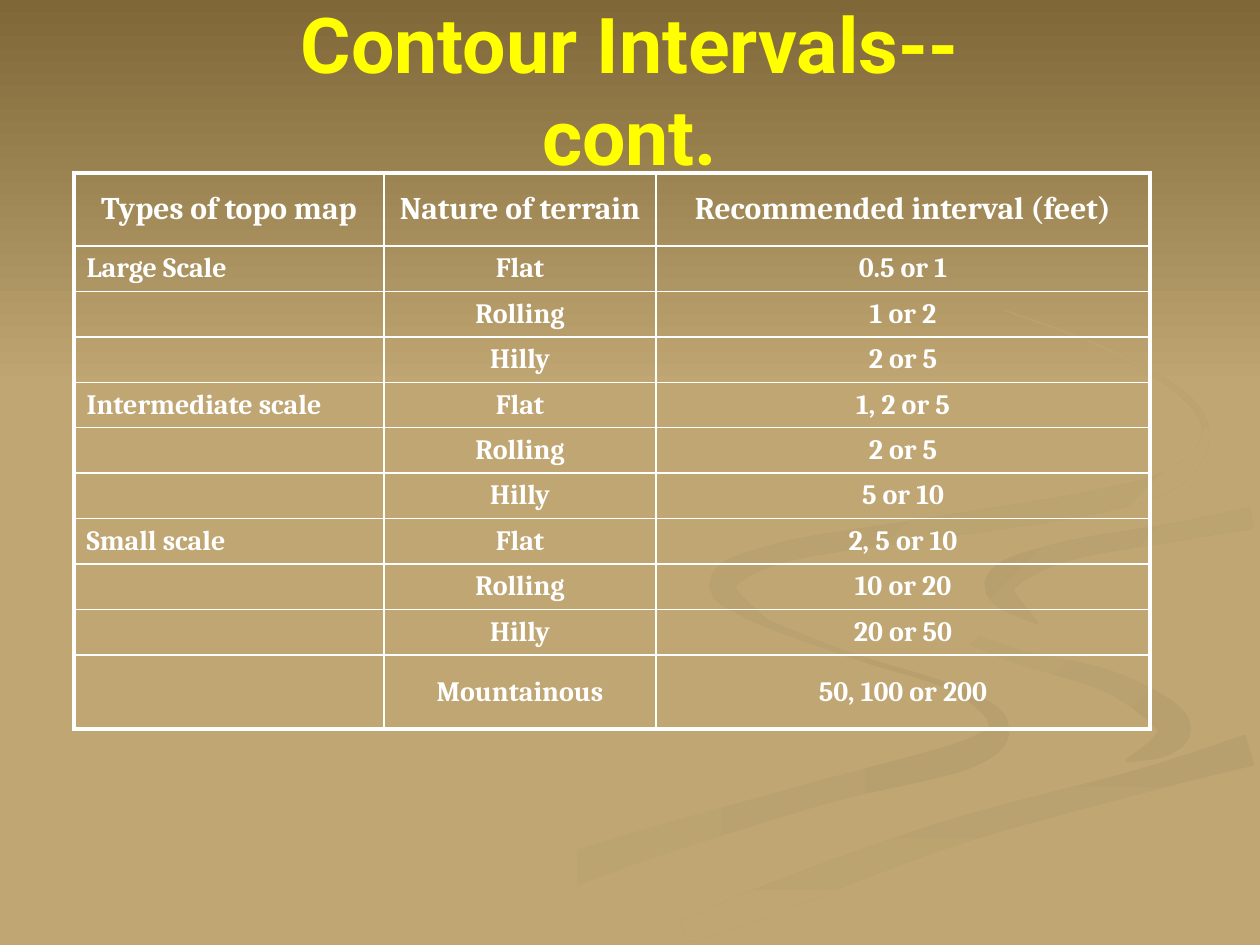
from math import hypot

from lxml import etree
from pptx import Presentation
from pptx.dml.color import RGBColor
from pptx.enum.text import MSO_ANCHOR, MSO_AUTO_SIZE, PP_ALIGN
from pptx.oxml.ns import qn
from pptx.util import Emu, Pt

LEFT, CENTER = PP_ALIGN.LEFT, PP_ALIGN.CENTER
MIDDLE = MSO_ANCHOR.MIDDLE
NO_AUTOFIT = MSO_AUTO_SIZE.NONE
TITLE_ONLY = 5
PX_PER_INCH = 126
SLIDE_WIDTH, SLIDE_HEIGHT, SHADE_HEIGHT = 1260, 945, 388
SAND, SHADE, BROWN, YELLOW, WHITE = "BFA673", "B79F6E", "7F6737", "FFFF00", "FFFFFF"
OUTER_LINE, INNER_LINE = 2.25, 1
CURVE_STEPS = 8

COLUMN_WIDTHS = [310, 272, 494]
HEADER_HEIGHT, MIDDLE_HEIGHT, LAST_HEIGHT = 73, 409, 74
CELL_MARGIN = 5
HEADERS = ("Types of topo map", "Nature of terrain", "Recommended interval (feet)")
INTERVALS = {
    "Large Scale": {"Flat": "0.5 or 1", "Rolling": "1 or 2", "Hilly": "2 or 5"},
    "Intermediate scale": {"Flat": "1, 2 or 5", "Rolling": "2 or 5", "Hilly": "5 or 10"},
    "Small scale": {"Flat": "2, 5 or 10", "Rolling": "10 or 20", "Hilly": "20 or 50",
                    "Mountainous": "50, 100 or 200"},
}

MAIN_BAND = [(1245, 500, 19), (1133, 517, 14), (1000, 545, 26), (950, 585, 66), (1048, 640, 26),
             (1160, 674, 28), (1222, 712, 66), (1105, 777, 10), (936, 817, 12), (780, 871, 16),
             (655, 930, 20)]
LOWER_RIBBON = [(722, 586, 3), (742, 612, 8), (850, 655, 5), (950, 687, 6), (998, 722, 19),
                (968, 754, 28), (820, 793, 24), (629, 850, 31), (525, 888, 36), (440, 926, 36)]
RIGHT_CURL = [(914, 590, 3), (935, 620, 10), (1010, 654, 14), (1110, 682, 22),
              (1172, 722, 32), (1162, 745, 24), (1126, 761, 2)]
CORNER_RIBBON = [(685, 932, 22), (774, 898, 30), (948, 834, 26), (1138, 782, 24), (1250, 750, 32)]
EDGE_RIBBON = [(1252, 518, 22), (1176, 532, 18), (1060, 553, 20), (999, 585, 30), (1038, 624, 2)]
UPPER_RIBBON = [(1004, 310, 1), (1100, 346, 3), (1180, 392, 6), (1206, 436, 8), (1170, 480, 20),
                (1080, 505, 23), (920, 530, 21), (780, 553, 20), (722, 586, 26), (778, 630, 1)]
RIBBONS = [
    (MAIN_BAND, SAND, SAND, 0),
    (LOWER_RIBBON, SAND, SHADE, 0),
    (RIGHT_CURL, SAND, SHADE, 45),
    (CORNER_RIBBON, SHADE, SAND, 90),
    (EDGE_RIBBON, SHADE, SAND, 45),
    (UPPER_RIBBON, SHADE, SAND, 45),
]


def px(length):
    return Emu(round(length * 914400 / PX_PER_INCH))


def color(value):
    return RGBColor.from_string(value)


def write_text(frame, text, *, font, size, fill, align):
    paragraph = frame.paragraphs[0]
    paragraph.alignment = align
    if not text:
        paragraph._p.get_or_add_endParaRPr().set("sz", str(size * 100))
        return
    run = paragraph.add_run()
    run.text = text
    run.font.name = font
    run.font.size = Pt(size)
    run.font.bold = True
    run.font.color.rgb = color(fill)


def smooth(knots):
    padded = [knots[0], *knots, knots[-1]]
    curve = []
    for before, start, end, after in zip(padded, padded[1:], padded[2:], padded[3:]):
        for step in range(CURVE_STEPS):
            t = step / CURVE_STEPS
            curve.append(tuple(
                b + t * (c - a) / 2 + t**2 * (2 * a - 5 * b + 4 * c - d) / 2
                + t**3 * (3 * b - a - 3 * c + d) / 2
                for a, b, c, d in zip(before, start, end, after)))
    return [*curve, knots[-1]]


def ribbon_outline(knots):
    curve = smooth(knots)
    one_side, other_side = [], []
    for before, (x, y, width), after in zip(curve[:1] + curve, curve, curve[1:] + curve[-1:]):
        run, rise = after[0] - before[0], after[1] - before[1]
        half = width / 2 / hypot(run, rise)
        one_side.append((x - rise * half, y + run * half))
        other_side.append((x + rise * half, y - run * half))
    return one_side + other_side[::-1]


def add_outline(slide, left, top, points, start, end, angle):
    places = [(px(left + x), px(top + y)) for x, y in points]
    builder = slide.shapes.build_freeform(*places[0])
    builder.add_line_segments(places[1:], close=True)
    shape = builder.convert_to_shape()
    shape.shadow.inherit = False
    shape.line.fill.background()
    if start == end:
        shape.fill.solid()
        shape.fill.fore_color.rgb = color(start)
        return
    shape.fill.gradient()
    shape.fill.gradient_angle = -angle % 360
    for stop, value in zip(shape.fill.gradient_stops, (start, end)):
        stop.color.rgb = color(value)


def add_backdrop(slide, left, top, width, shade_height):
    slide.background.fill.solid()
    slide.background.fill.fore_color.rgb = color(SAND)
    corners = [(0, 0), (width, 0), (width, shade_height), (0, shade_height)]
    add_outline(slide, left, top, corners, BROWN, SAND, 90)
    for knots, start, end, angle in RIBBONS:
        add_outline(slide, left, top, ribbon_outline(knots), start, end, angle)


def place_title(slide, left, top, width, height):
    title = slide.shapes.title
    slide.shapes._spTree.append(title._element)
    title.left, title.top, title.width, title.height = map(px, (left, top, width, height))
    frame = title.text_frame
    frame.word_wrap = True
    frame.auto_size = NO_AUTOFIT
    frame.vertical_anchor = MIDDLE
    write_text(frame, "Contour Intervals--cont.", font="Roboto", size=44, fill=YELLOW, align=CENTER)


def set_borders(cell, outer_sides):
    properties = cell._tc.get_or_add_tcPr()
    for index, side in enumerate(("L", "R", "T", "B")):
        width = OUTER_LINE if side in outer_sides else INNER_LINE
        line = etree.Element(qn(f"a:ln{side}"), w=str(Pt(width)))
        solid = etree.SubElement(line, qn("a:solidFill"))
        etree.SubElement(solid, qn("a:srgbClr"), val=WHITE)
        properties.insert(index, line)


def interval_rows():
    rows = [HEADERS]
    for scale, terrains in INTERVALS.items():
        for index, (terrain, interval) in enumerate(terrains.items()):
            rows.append(("" if index else scale, terrain, interval))
    return rows


def add_interval_table(slide, left, top):
    rows = interval_rows()
    middle_count = len(rows) - 2
    heights = [HEADER_HEIGHT, *[MIDDLE_HEIGHT / middle_count] * middle_count, LAST_HEIGHT]
    box = map(px, (left, top, sum(COLUMN_WIDTHS), sum(heights)))
    table = slide.shapes.add_table(len(rows), len(COLUMN_WIDTHS), *box).table
    table.first_row = table.horz_banding = False
    for column, width in zip(table.columns, COLUMN_WIDTHS):
        column.width = px(width)
    for r, (values, height) in enumerate(zip(rows, heights)):
        table.rows[r].height = px(height)
        for c, value in enumerate(values):
            cell = table.cell(r, c)
            cell.fill.background()
            cell.vertical_anchor = MIDDLE
            cell.margin_top = cell.margin_bottom = px(CELL_MARGIN)
            write_text(cell.text_frame, value, font="Cambria", size=16 if r else 18,
                       fill=WHITE, align=LEFT if r and c == 0 else CENTER)
            edges = {"L": c == 0, "R": c == len(values) - 1, "T": r == 0, "B": r == len(rows) - 1}
            set_borders(cell, [side for side, outer in edges.items() if outer])


def main():
    presentation = Presentation()
    presentation.slide_width, presentation.slide_height = px(SLIDE_WIDTH), px(SLIDE_HEIGHT)
    slide = presentation.slides.add_slide(presentation.slide_layouts[TITLE_ONLY])
    add_backdrop(slide, 0, 0, SLIDE_WIDTH, SHADE_HEIGHT)
    place_title(slide, 254, 42, 752, 94)
    add_interval_table(slide, 74, 173)
    presentation.save("out.pptx")


if __name__ == "__main__":
    main()
